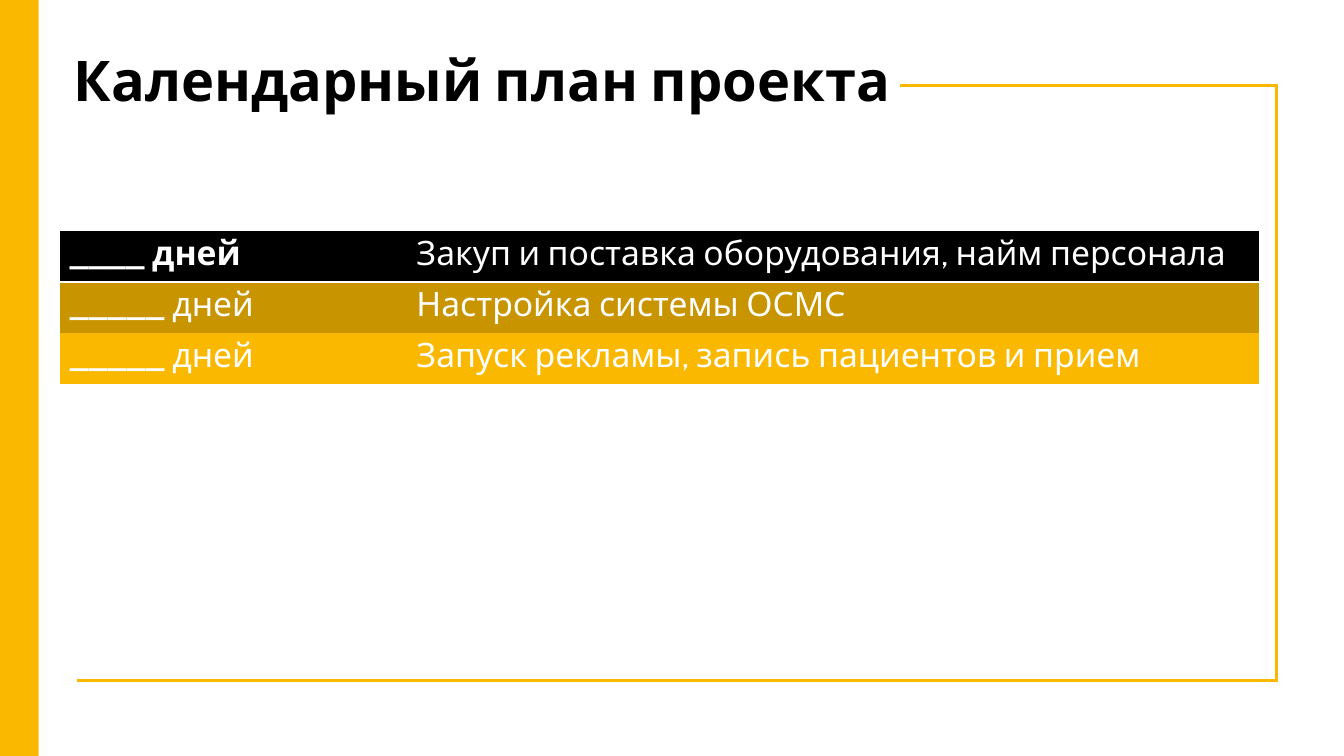
import dataclasses

import lxml.etree
import pptx
import pptx.dml.color
import pptx.enum.shapes
import pptx.enum.text
import pptx.oxml.ns
import pptx.util

COLORS = {"gold": "FAB900", "dark": "C89400", "black": "000000", "white": "FFFFFF"}
FONT = "Cabin"
WIDE, HIGH = pptx.util.Inches(13.33), pptx.util.Inches(7.5)


@dataclasses.dataclass
class Rule:
    x1: float
    y1: float
    x2: float
    y2: float


@dataclasses.dataclass
class Stage:
    term: str
    task: str
    fill: str
    bold: bool = False


# Places are percentages of the slide's size
RULES = [
    Rule(66.99, 11.33, 95.12, 11.33),
    Rule(5.7, 90, 94.97, 90),
    Rule(94.97, 90.27, 94.97, 11.2),
]
STAGES = [
    Stage("____ дней", "Закуп и поставка оборудования, найм персонала", "black", True),
    Stage("_____ дней", "Настройка системы ОСМС", "dark"),
    Stage("_____ дней", "Запуск рекламы, запись пациентов и прием", "gold"),
]
COLS = [25.81, 63.47]
ROW = 6.76


def across(share: float) -> int:
    return round(WIDE * share / 100)


def down(share: float) -> int:
    return round(HIGH * share / 100)


def color(name: str) -> pptx.dml.color.RGBColor:
    return pptx.dml.color.RGBColor.from_string(COLORS[name])


def style(para, size: float, name: str, bold: bool) -> None:
    para.font.name = FONT
    para.font.size = pptx.util.Pt(size)
    para.font.bold = bold
    para.font.color.rgb = color(name)


def draw_bar(slide) -> None:
    bar = slide.shapes.add_shape(
        pptx.enum.shapes.MSO_SHAPE.RECTANGLE, 0, 0, across(2.87), HIGH)
    bar.shadow.inherit = False
    bar.fill.solid()
    bar.fill.fore_color.rgb = color("gold")
    bar.line.fill.background()


def draw_title(slide, text: str) -> None:
    box = slide.shapes.add_textbox(across(4.88), down(6.67), across(87.62), down(10.67))
    frame = box.text_frame
    frame.word_wrap = True
    frame.vertical_anchor = pptx.enum.text.MSO_ANCHOR.TOP
    frame.margin_left = frame.margin_right = pptx.util.Inches(0.08)
    frame.margin_top = frame.margin_bottom = pptx.util.Inches(0.03)
    para = frame.paragraphs[0]
    para.text = text
    para.line_spacing = 0.9
    style(para, 40, "black", True)


def draw_rule(slide, rule: Rule) -> None:
    line = slide.shapes.add_connector(
        pptx.enum.shapes.MSO_CONNECTOR.STRAIGHT,
        across(rule.x1), down(rule.y1), across(rule.x2), down(rule.y2))
    line.line.color.rgb = color("gold")
    line.line.width = pptx.util.Pt(2.5)
    lxml.etree.SubElement(line.element.spPr, pptx.oxml.ns.qn("a:effectLst"))


def set_edges(cell, white: str) -> None:
    """Leave every edge empty but the one named."""
    qn = pptx.oxml.ns.qn
    props = cell._tc.get_or_add_tcPr()
    for spot, side in enumerate("LRTB"):
        edge = lxml.etree.Element(qn("a:ln" + side))
        if side == white:
            edge.set("w", str(pptx.util.Pt(2)))
            fill = lxml.etree.SubElement(edge, qn("a:solidFill"))
            lxml.etree.SubElement(fill, qn("a:srgbClr"), val=COLORS["white"])
        else:
            edge.set("w", "0")
            lxml.etree.SubElement(edge, qn("a:noFill"))
        props.insert(spot, edge)


def fill_cell(cell, text: str, fill: str, bold: bool) -> None:
    cell.fill.solid()
    cell.fill.fore_color.rgb = color(fill)
    cell.margin_top = cell.margin_bottom = pptx.util.Inches(0.02)
    para = cell.text_frame.paragraphs[0]
    para.text = text
    style(para, 24, "white", bold)


def draw_plan(slide) -> None:
    table = slide.shapes.add_table(
        len(STAGES), len(COLS), across(4.43), down(30.53),
        across(sum(COLS)), down(ROW * len(STAGES))).table
    table.first_row = table.horz_banding = False
    for col, share in zip(table.columns, COLS):
        col.width = across(share)
    for index, stage in enumerate(STAGES):
        table.rows[index].height = down(ROW)
        edge = {0: "B", 1: "T"}.get(index, "")
        pairs = [(stage.term, stage.bold), (stage.task, False)]
        for spot, (text, bold) in enumerate(pairs):
            cell = table.cell(index, spot)
            fill_cell(cell, text, stage.fill, bold)
            set_edges(cell, edge)


def main() -> None:
    deck = pptx.Presentation()
    deck.slide_width, deck.slide_height = WIDE, HIGH
    slide = deck.slides.add_slide(deck.slide_layouts[6])
    # Side bar and heading
    draw_bar(slide)
    draw_title(slide, "Календарный план проекта")
    # Frame
    for rule in RULES:
        draw_rule(slide, rule)
    # Schedule
    draw_plan(slide)
    deck.save("out.pptx")


if __name__ == "__main__":
    main()
